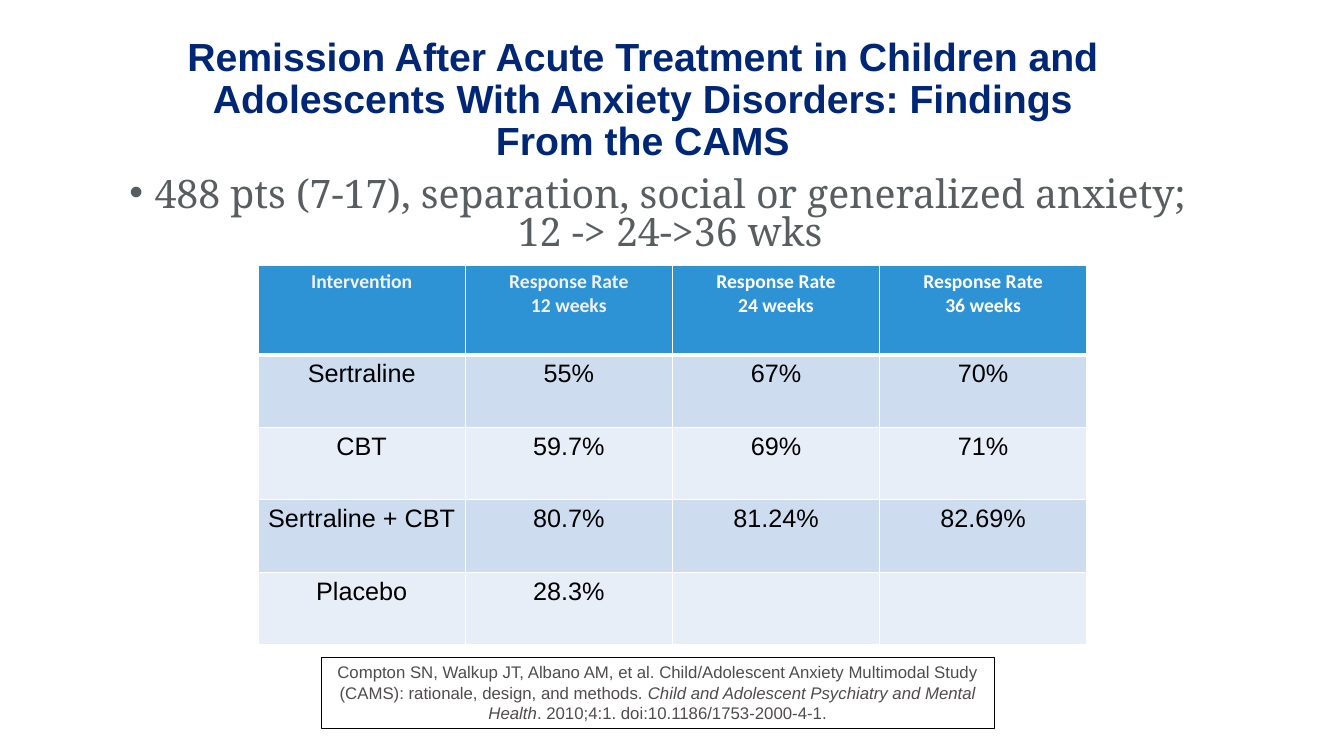
from dataclasses import dataclass

from lxml import etree
from pptx import Presentation
from pptx.dml.color import RGBColor
from pptx.enum.shapes import MSO_SHAPE
from pptx.enum.text import MSO_ANCHOR, MSO_AUTO_SIZE, PP_ALIGN
from pptx.oxml.ns import qn
from pptx.util import Inches, Pt

CENTER = PP_ALIGN.CENTER
TOP = MSO_ANCHOR.TOP
MIDDLE = MSO_ANCHOR.MIDDLE
NO_FIT = MSO_AUTO_SIZE.NONE
RECT = MSO_SHAPE.RECTANGLE

NAVY = RGBColor(0x00, 0x27, 0x76)
SLATE = RGBColor(0x58, 0x5E, 0x60)
GRAY = RGBColor(0x50, 0x4C, 0x4C)
BLUE = RGBColor(0x2E, 0x93, 0xD5)
DARK = RGBColor(0xCD, 0xDC, 0xEF)
LIGHT = RGBColor(0xE8, 0xEE, 0xF7)
PALE = RGBColor(0xF2, 0xF2, 0xF2)
WHITE = RGBColor(0xFF, 0xFF, 0xFF)
BLACK = RGBColor(0x00, 0x00, 0x00)


@dataclass(frozen=True)
class Style:
    name: str
    size: float
    color: RGBColor
    bold: bool = False


@dataclass(frozen=True)
class Row:
    cells: tuple[str, ...]
    fill: RGBColor
    height: float = 0.72


TITLE = Style("Arial", 28, NAVY, True)
LEAD = Style("Noto Serif", 28, SLATE)
HEAD = Style("Calibri", 14, WHITE, True)
SOFT = Style("Calibri", 14, PALE, True)
DATA = Style("Arial", 18, BLACK)
CITE = Style("Arial", 12, GRAY)

ROWS = (
    Row(("Intervention", "Response Rate\n12 weeks", "Response Rate\n24 weeks",
         "Response Rate\n36 weeks"), BLUE, 0.89),
    Row(("Sertraline", "55%", "67%", "70%"), DARK),
    Row(("CBT", "59.7%", "69%", "71%"), LIGHT),
    Row(("Sertraline + CBT", "80.7%", "81.24%", "82.69%"), DARK),
    Row(("Placebo", "28.3%", "", ""), LIGHT),
)
SOURCE = (
    ("Compton SN, Walkup JT, Albano AM, et al. Child/Adolescent Anxiety "
     "Multimodal Study (CAMS): rationale, design, and methods. ", False),
    ("Child and Adolescent Psychiatry and Mental Health", True),
    (". 2010;4:1. doi:10.1186/1753-2000-4-1.", False),
)


def place(shape, left: float, top: float, width: float, height: float) -> None:
    shape.left, shape.top = Inches(left), Inches(top)
    shape.width, shape.height = Inches(width), Inches(height)


def dress(frame, style: Style, space: float | None = None) -> None:
    for para in frame.paragraphs:
        para.alignment = CENTER
        if space:
            para.line_spacing = space
        for run in para.runs:
            font = run.font
            font.name, font.size = style.name, Pt(style.size)
            font.bold, font.color.rgb = style.bold, style.color


def add_bullet(para) -> None:
    props = para._p.get_or_add_pPr()
    props.set("marL", str(Inches(0.25)))
    props.set("indent", str(-Inches(0.25)))
    etree.SubElement(props, qn("a:buFont")).set("typeface", "Arial")
    etree.SubElement(props, qn("a:buChar")).set("char", "•")


def add_edge(cell, side: str, width: float) -> None:
    props = cell._tc.get_or_add_tcPr()
    line = etree.SubElement(props, qn(f"a:{side}"), w=str(Pt(width)))
    fill = etree.SubElement(line, qn("a:solidFill"))
    etree.SubElement(fill, qn("a:srgbClr")).set("val", str(WHITE))


def add_rates(slide) -> None:
    count = len(ROWS[0].cells)
    frame = slide.shapes.add_table(len(ROWS), count, Inches(2.56),
                                   Inches(2.63), Inches(8.22), Inches(3.77))
    table = frame.table
    table.horz_banding = False
    for col in table.columns:
        col.width = Inches(8.22 / count)
    for r, row in enumerate(ROWS):
        table.rows[r].height = Inches(row.height)
        for c, text in enumerate(row.cells):
            cell = table.cell(r, c)
            cell.text_frame.text = text
            style = DATA if r else SOFT if c < 2 else HEAD
            dress(cell.text_frame, style)
            # Thick rule between the header and the data
            add_edge(cell, "lnL", 1)
            add_edge(cell, "lnR", 1)
            add_edge(cell, "lnT", 3 if r == 1 else 1)
            add_edge(cell, "lnB", 3 if r == 0 else 1)
            cell.fill.solid()
            cell.fill.fore_color.rgb = row.fill


def main() -> None:
    deck = Presentation()
    deck.slide_width, deck.slide_height = Inches(13.33), Inches(7.5)
    slide = deck.slides.add_slide(deck.slide_layouts[5])

    # Title, raised by a deep bottom inset
    title = slide.shapes.title
    place(title, 1.5, 0.54, 9.75, 1.4)
    frame = title.text_frame
    frame.text = ("Remission After Acute Treatment in Children and Adolescents "
                  "With Anxiety Disorders: Findings From the CAMS")
    frame.auto_size, frame.word_wrap = NO_FIT, True
    frame.vertical_anchor = MIDDLE
    frame.margin_bottom = Inches(0.53)
    dress(frame, TITLE, 0.9)

    # Study sample
    lead = slide.shapes.add_textbox(Inches(1.02), Inches(1.72),
                                    Inches(11), Inches(4.43))
    frame = lead.text_frame
    frame.text = ("488 pts (7-17), separation, social or generalized anxiety; "
                  "12 -> 24->36 wks")
    frame.auto_size, frame.word_wrap = NO_FIT, True
    add_bullet(frame.paragraphs[0])
    dress(frame, LEAD, 0.8)

    # Response rates
    add_rates(slide)

    # Citation
    cite = slide.shapes.add_shape(RECT, Inches(3.19), Inches(6.52),
                                  Inches(6.67), Inches(0.71))
    cite.shadow.inherit = False
    cite.fill.background()
    cite.line.color.rgb, cite.line.width = BLACK, Pt(0.75)
    frame = cite.text_frame
    frame.word_wrap, frame.vertical_anchor = True, TOP
    for text, slant in SOURCE:
        run = frame.paragraphs[0].add_run()
        run.text, run.font.italic = text, slant
    dress(frame, CITE)

    deck.save("out.pptx")


if __name__ == "__main__":
    main()
